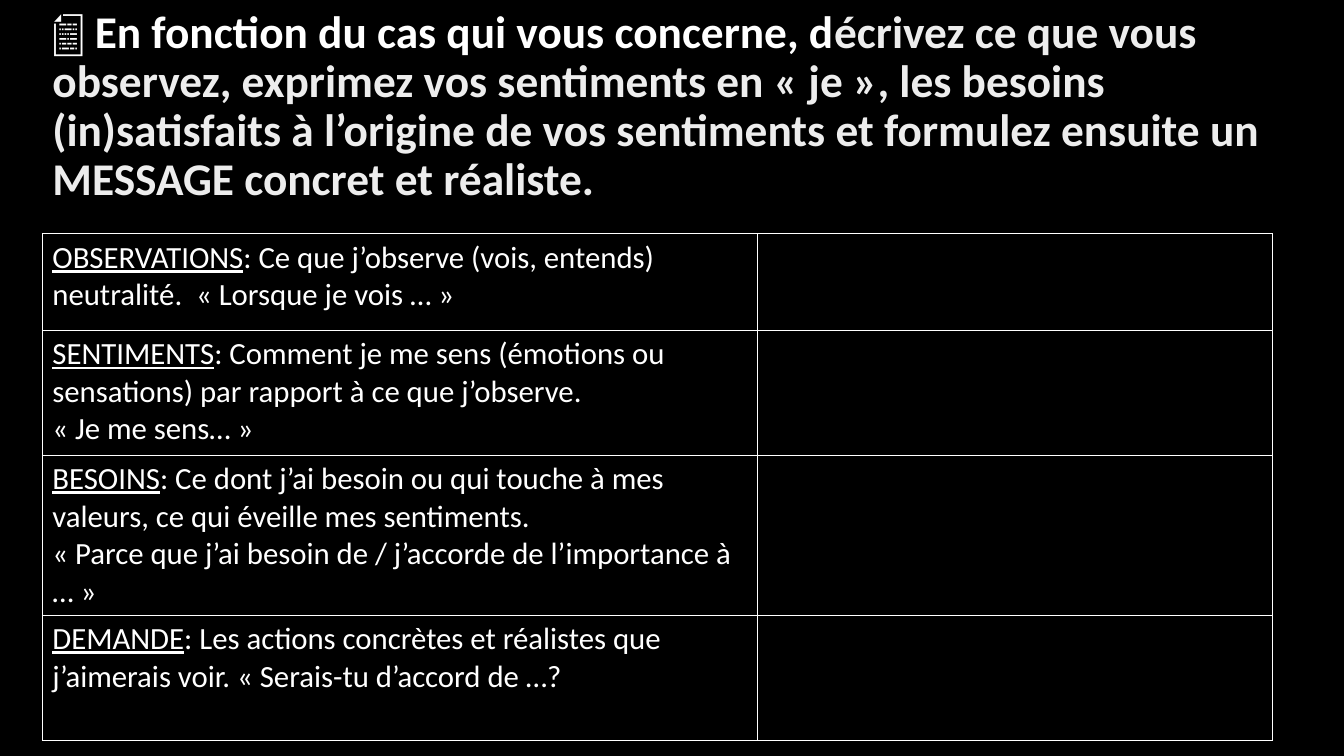
import pptx
import pptx.util
import pptx.dml.color
import pptx.enum.text
import pptx.oxml
import pptx.oxml.ns

Inches = pptx.util.Inches
Pt = pptx.util.Pt
RGBColor = pptx.dml.color.RGBColor

# Content
TITLE_RUNS = [
    ("📄 En fonction du cas qui vous concerne, d", "white"),
    ("écrivez ce que vous observez, exprimez vos sentiments en « je », les besoins "
     "(in)satisfaits à l’origine de vos sentiments et formulez ensuite un MESSAGE "
     "concret et réaliste.", "soft"),
]
# Each step: row height, underlined keyword, explanation, optional second paragraph
STEPS = [
    (0.96, "OBSERVATIONS",
     ": Ce que j’observe (vois, entends) neutralité.  « Lorsque je vois … »", None),
    (1.24, "SENTIMENTS",
     ": Comment je me sens (émotions ou sensations) par rapport à ce que j’observe.",
     "« Je me sens… »"),
    (1.53, "BESOINS",
     ": Ce dont j’ai besoin ou qui touche à mes valeurs, ce qui éveille mes sentiments.",
     "« Parce que j’ai besoin de / j’accorde de l’importance à … »"),
    (1.24, "DEMANDE",
     ": Les actions concrètes et réalistes que j’aimerais voir. "
     "« Serais-tu d’accord de …?", None),
]
COLUMN_WIDTHS = [7.09, 5.11]

# Style
BLACK = RGBColor(0x00, 0x00, 0x00)
WHITE = RGBColor(0xFF, 0xFF, 0xFF)
SOFT_WHITE = RGBColor(0xED, 0xED, 0xED)
TITLE_COLORS = {"white": WHITE, "soft": SOFT_WHITE}
FONT_NAME = "Calibri"
LEFT = 0.42


def add_run(paragraph, text, size, color, bold=False, underline=False):
    run = paragraph.add_run()
    run.text = text
    run.font.name = FONT_NAME
    run.font.size = Pt(size)
    run.font.color.rgb = color
    run.font.bold = bold
    run.font.underline = underline


def add_borders(cell):
    properties = cell._tc.get_or_add_tcPr()
    for position, side in enumerate(("lnL", "lnR", "lnT", "lnB")):
        border = pptx.oxml.parse_xml(
            f'<a:{side} {pptx.oxml.ns.nsdecls("a")} w="{Pt(1)}"><a:solidFill>'
            f'<a:srgbClr val="{WHITE}"/></a:solidFill></a:{side}>')
        properties.insert(position, border)


def add_title(slide):
    title = slide.shapes.title
    title.left, title.top = Inches(LEFT), Inches(0.86)
    title.width, title.height = Inches(12.52), Inches(0.94)
    frame = title.text_frame
    frame.word_wrap = True
    frame.auto_size = pptx.enum.text.MSO_AUTO_SIZE.NONE
    frame.vertical_anchor = pptx.enum.text.MSO_ANCHOR.MIDDLE
    paragraph = frame.paragraphs[0]
    paragraph.alignment = pptx.enum.text.PP_ALIGN.LEFT
    paragraph.line_spacing = 0.9
    for text, tone in TITLE_RUNS:
        add_run(paragraph, text, 32.4, TITLE_COLORS[tone], bold=True)
    # The closing line break lifts the centred title above the table
    paragraph.add_line_break()
    paragraph.font.size = Pt(32.4)


def add_steps_table(slide):
    height = sum(step[0] for step in STEPS)
    table = slide.shapes.add_table(
        len(STEPS), len(COLUMN_WIDTHS), Inches(LEFT), Inches(2.32),
        Inches(sum(COLUMN_WIDTHS)), Inches(height)).table
    table.first_row = False
    table.horz_banding = False
    for column, width in zip(table.columns, COLUMN_WIDTHS):
        column.width = Inches(width)
    for row, (row_height, keyword, explanation, example) in zip(table.rows, STEPS):
        row.height = Inches(row_height)
        for cell in row.cells:
            cell.fill.solid()
            cell.fill.fore_color.rgb = BLACK
            add_borders(cell)
        frame = row.cells[0].text_frame
        paragraph = frame.paragraphs[0]
        add_run(paragraph, keyword, 22, WHITE, underline=True)
        add_run(paragraph, explanation, 22, WHITE)
        if example:
            add_run(frame.add_paragraph(), example, 22, WHITE)


def main():
    presentation = pptx.Presentation()
    presentation.slide_width = Inches(13.33)
    presentation.slide_height = Inches(7.5)
    slide = presentation.slides.add_slide(presentation.slide_layouts[5])
    slide.background.fill.solid()
    slide.background.fill.fore_color.rgb = BLACK
    add_title(slide)
    add_steps_table(slide)
    presentation.save("out.pptx")


if __name__ == "__main__":
    main()
